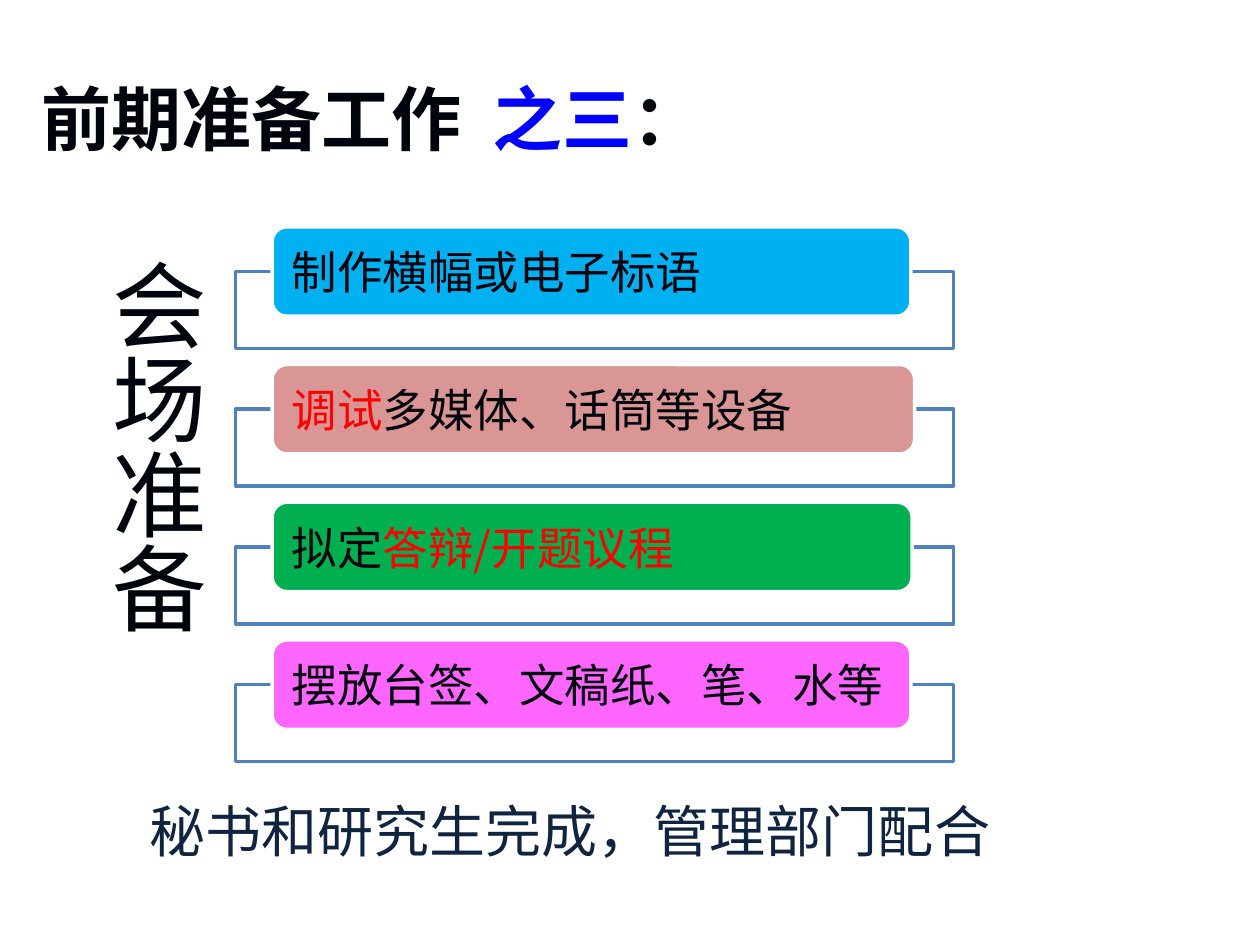
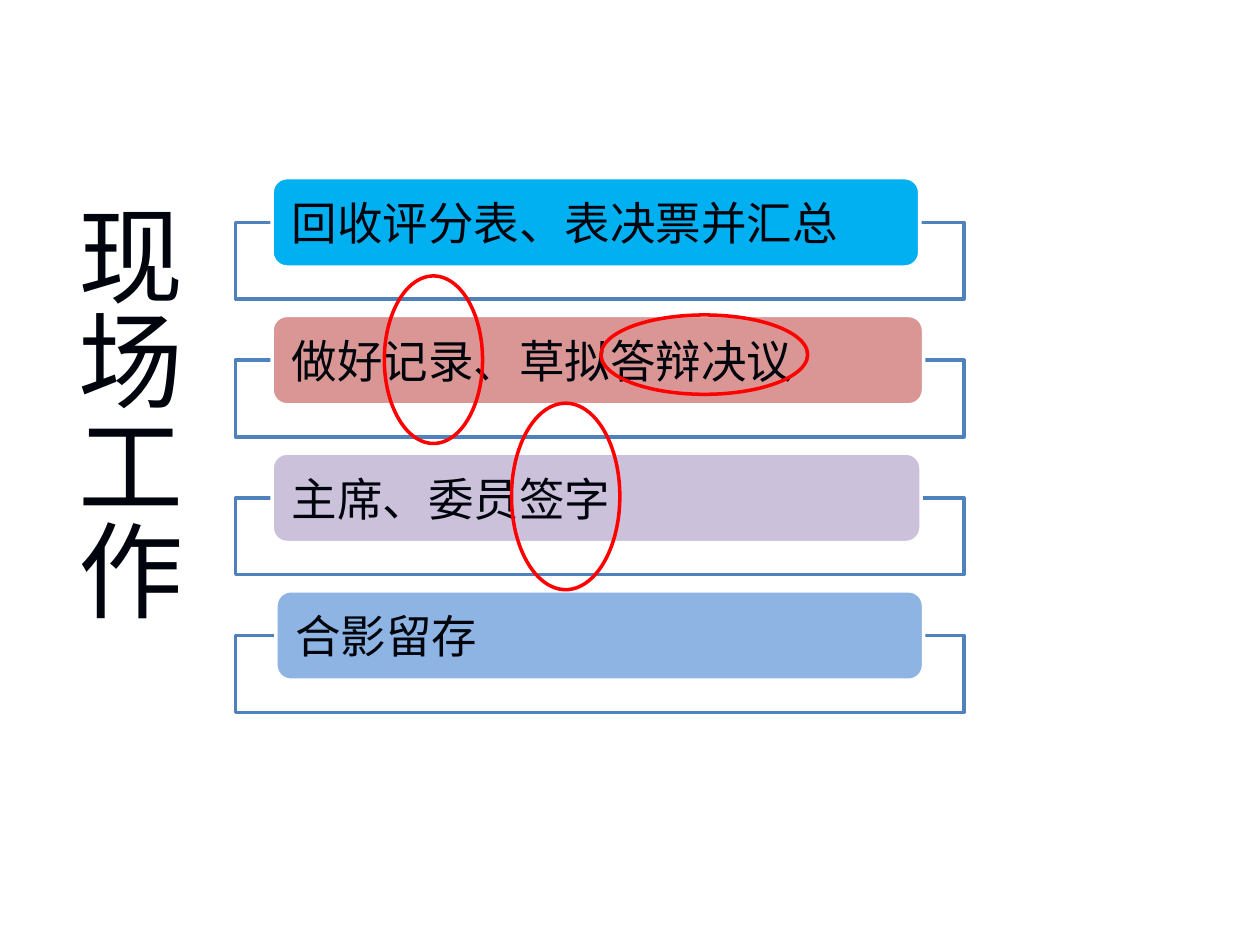
import pptx
import pptx.util
import pptx.dml.color
import pptx.enum.shapes
import pptx.enum.text
import pptx.oxml
import pptx.oxml.ns

Inches, Pt = pptx.util.Inches, pptx.util.Pt
RGB = pptx.dml.color.RGBColor.from_string
SHAPE = pptx.enum.shapes.MSO_SHAPE
ANCHOR = pptx.enum.text.MSO_ANCHOR
AUTO = pptx.enum.text.MSO_AUTO_SIZE
ALIGN = pptx.enum.text.PP_ALIGN
qn = pptx.oxml.ns.qn

THEME = {
    "font": "Noto Sans CJK SC",
    "ink": "00040C", "navy": "0F243E", "blue": "0000FF", "red": "FF0000",
    "white": "FFFFFF", "frame": "4F81BD",
    "title": 40, "bar": 26, "note": 32, "line": 2,
}

# Text is a list of (words, colour name); a bar is (text, fill, left, width).
VENUE = {
    "title": [("前期准备工作  ", "ink"), ("之三", "blue"), ("：", "ink")],
    "title_at": (0.23, 0.55, 8.83, 0.77),
    "label": [("会场准备", "ink")],
    "label_at": (0.62, 1.95, 1.57, 4.69),
    "label_size": 54,
    "note": [("秘书和研究生完成，管理部门配合", "navy")],
    "note_at": (1.09, 6.33, 8.05, 0.63),
    "top": 1.8,
    "frame_width": 5.7,
    "bars": [
        ([("制作横幅或电子标语", "ink")], "00B0F0", 2.16, 5.07),
        ([("调试", "red"), ("多媒体、话筒等设备", "ink")], "D99694", 2.16, 5.1),
        ([("拟定", "ink"), ("答辩/开题议程", "red")], "00B050", 2.16, 5.08),
        ([("摆放台签、文稿纸、笔、水等", "ink")], "FF66FF", 2.16, 5.07),
    ],
}
ON_SITE = {
    "label": [("现场工作", "ink")],
    "label_at": (0.39, 1.56, 1.72, 4.69),
    "label_size": 60,
    "top": 1.41,
    "frame_width": 5.78,
    "bars": [
        ([("回收评分表、表决票并汇总", "ink")], "00B0F0", 2.16, 5.14),
        ([("做好记录、草拟答辩决议", "ink")], "D99694", 2.16, 5.17),
        ([("主席、委员签字", "ink")], "CCC1DA", 2.16, 5.15),
        ([("合影留存", "ink")], "8EB4E3", 2.19, 5.14),
    ],
    "rings": [(4.06, 3.2, 0.86, 1.48), (3.05, 2.19, 0.78, 1.33),
              (4.77, 2.5, 1.64, 0.63)],
}

FRAME_LEFT, FRAME_HEIGHT, FRAME_DROP = 1.87, 0.61, 0.355
BAR_HEIGHT, BAR_PITCH = 0.71, 1.093


def place(sp, box):
    for name, value in zip(("left", "top", "width", "height"), box):
        setattr(sp, name, Inches(value))


def write(sp, text, size, bold=False, spacing=None, **frame):
    """Fill one paragraph with coloured runs; frame holds text frame settings."""
    tf = sp.text_frame
    settings = {"word_wrap": True, "vertical_anchor": ANCHOR.TOP, **frame}
    for name, value in settings.items():
        setattr(tf, name, value)
    p = tf.paragraphs[0]
    p.alignment = ALIGN.LEFT
    if spacing:
        p.line_spacing = spacing
    for words, colour in text:
        r = p.add_run()
        r.text = words
        for name, value in {"name": THEME["font"], "size": Pt(size), "bold": bold}.items():
            setattr(r.font, name, value)
        r.font.color.rgb = RGB(THEME[colour])
        ea = r.font._element.makeelement(qn("a:ea"), {"typeface": THEME["font"]})
        r.font._element.find(qn("a:latin")).addnext(ea)


def add_shape(s, kind, box, line, fill=None):
    sp = s.shapes.add_shape(kind, *map(Inches, box))
    sp.shadow.inherit = False
    if fill:
        sp.fill.solid()
        sp.fill.fore_color.rgb = RGB(fill)
    else:
        sp.fill.background()
    sp.line.color.rgb = RGB(line)
    sp.line.width = Pt(THEME["line"])
    return sp


def add_bars(s, content):
    for i, (text, fill, left, width) in enumerate(content["bars"]):
        top = content["top"] + i * BAR_PITCH
        add_shape(s, SHAPE.RECTANGLE,
                  (FRAME_LEFT, top + FRAME_DROP, content["frame_width"], FRAME_HEIGHT),
                  THEME["frame"], THEME["white"])
        bar = add_shape(s, SHAPE.ROUNDED_RECTANGLE, (left, top, width, BAR_HEIGHT),
                        THEME["white"], fill)
        write(bar, text, THEME["bar"], vertical_anchor=ANCHOR.MIDDLE,
              margin_left=Inches(0.12), margin_right=Inches(0.12),
              margin_top=0, margin_bottom=0)


def write_label(sp, content):
    """Write the vertical label beside the bars."""
    place(sp, content["label_at"])
    write(sp, content["label"], content["label_size"], spacing=1.5,
          auto_size=AUTO.SHAPE_TO_FIT_TEXT)
    sp.text_frame._txBody.bodyPr.set("vert", "eaVert")


def add_textbox(s, box):
    return s.shapes.add_textbox(*map(Inches, box))


def build_venue(s):
    add_bars(s, VENUE)
    write_label(add_textbox(s, VENUE["label_at"]), VENUE)
    write(add_textbox(s, VENUE["note_at"]), VENUE["note"], THEME["note"], spacing=0.9)
    place(s.shapes.title, VENUE["title_at"])
    write(s.shapes.title, VENUE["title"], THEME["title"], bold=True,
          auto_size=AUTO.SHAPE_TO_FIT_TEXT)


def build_on_site(s):
    add_bars(s, ON_SITE)
    write_label(s.shapes.title, ON_SITE)
    for box in ON_SITE["rings"]:
        add_shape(s, SHAPE.OVAL, box, THEME["red"])


def main():
    prs = pptx.Presentation()
    prs.slide_width, prs.slide_height = Inches(10), Inches(7.5)
    title_only = prs.slide_layouts[5]
    for build in (build_venue, build_on_site):
        build(prs.slides.add_slide(title_only))
    prs.save("out.pptx")


if __name__ == "__main__":
    main()
